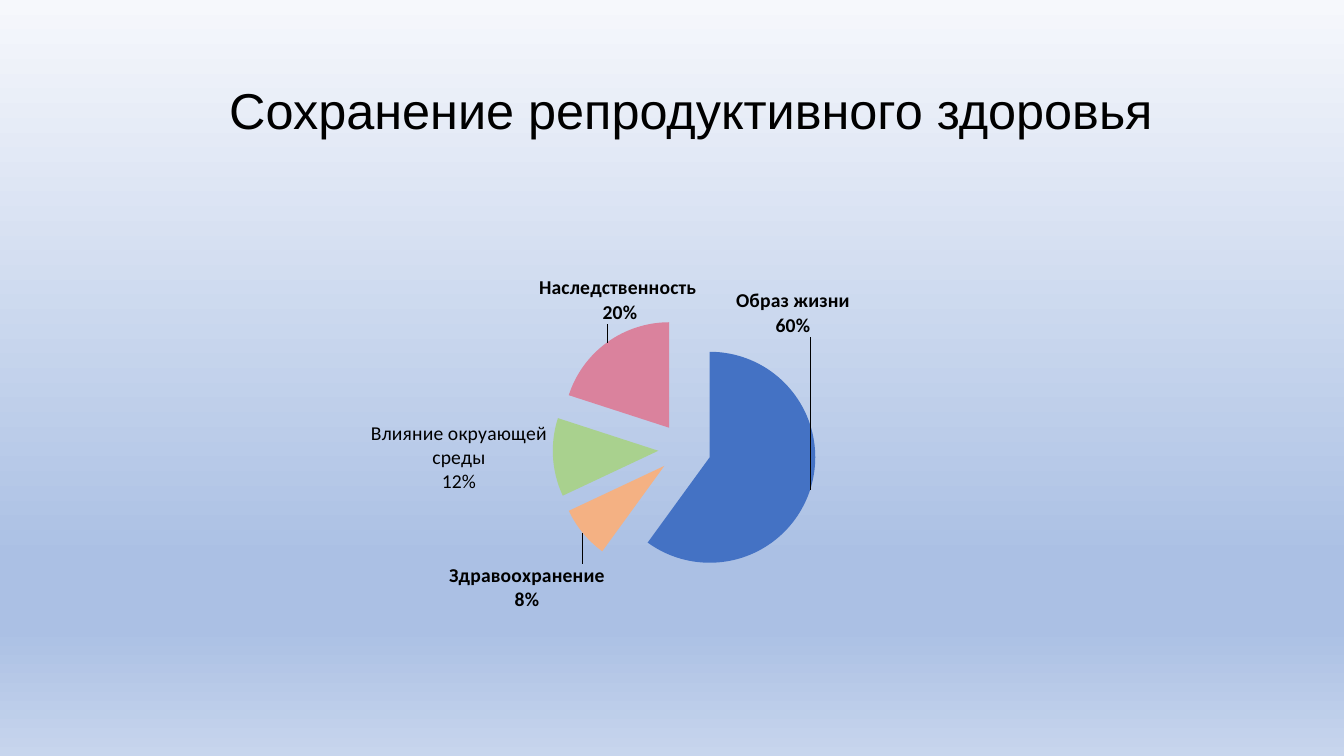
from copy import deepcopy

from lxml import etree
from pptx import Presentation
from pptx.chart.data import CategoryChartData
from pptx.dml.color import RGBColor
from pptx.enum.chart import XL_CHART_TYPE as ChartType, XL_LABEL_POSITION as LabelPos
from pptx.enum.text import MSO_ANCHOR, PP_ALIGN
from pptx.oxml.ns import qn
from pptx.util import Inches, Pt

BLACK = RGBColor(0x00, 0x00, 0x00)
BLUE = RGBColor(0x44, 0x72, 0xC4)
ORANGE = RGBColor(0xF4, 0xB1, 0x83)
GREEN = RGBColor(0xA9, 0xD1, 0x8E)
PINK = RGBColor(0xDA, 0x82, 0x9D)
SKY_TOP = RGBColor(0xF6, 0xF8, 0xFC)
SKY_DEEP = RGBColor(0xAB, 0xC0, 0xE4)
SKY_BASE = RGBColor(0xC7, 0xD5, 0xED)

BACKGROUND = [(0, SKY_TOP), (0.74, SKY_DEEP), (0.83, SKY_DEEP), (1, SKY_BASE)]

# Factor, share, slice colour, label shift as a fraction of the chart
FACTORS = [
    ("Образ жизни", 0.6, BLUE, (-0.09, -0.46)),
    ("Здравоохранение", 0.08, ORANGE, (0.03, 0.06)),
    ("Влияние окруающей среды", 0.12, GREEN, None),
    ("Наследственность ", 0.2, PINK, (0.11, -0.03)),
]
PLOT_AREA = {"x": 0.333, "y": 0.297, "w": 0.622, "h": 0.599}


def chart_element(tag, **attrs):
    el = etree.Element(qn(f"c:{tag}"))
    for name, value in attrs.items():
        el.set(name, str(value))
    return el


def manual_layout(settings):
    layout = chart_element("layout")
    manual = chart_element("manualLayout")
    layout.append(manual)
    for tag, value in settings.items():
        manual.append(chart_element(tag, val=value))
    return layout


def set_background(slide):
    fill = slide.background.fill
    fill.gradient()
    fill.gradient_angle = 270
    stops = slide.element.find(".//" + qn("a:gsLst"))
    while len(stops) < len(BACKGROUND):
        stops.append(deepcopy(stops[0]))
    for stop, (position, color) in zip(fill.gradient_stops, BACKGROUND):
        stop.position = position
        stop.color.rgb = color


def style_font(font, name, size, bold=False):
    font.name = name
    font.size = Pt(size)
    font.bold = bold
    font.color.rgb = BLACK


def add_title(slide, text):
    box = slide.shapes.add_textbox(Inches(0.92), Inches(0.4), Inches(11.87), Inches(1.45))
    tf = box.text_frame
    tf.word_wrap = True
    tf.vertical_anchor = MSO_ANCHOR.MIDDLE
    p = tf.paragraphs[0]
    p.text = text
    p.alignment = PP_ALIGN.CENTER
    p.line_spacing = 0.9
    style_font(p.runs[0].font, "Arial", 36)


def label_slice(point, shift, name, share):
    label = point.data_label
    if shift is None:
        # Plain label with its own text
        tf = label.text_frame
        tf.text = f"{name}\n{share:.0%}"
        for p in tf.paragraphs:
            style_font(p.runs[0].font, "Calibri", 14)
        label.position = LabelPos.OUTSIDE_END
        return
    style_font(label.font, "Calibri", 14, bold=True)
    label.position = LabelPos.OUTSIDE_END


def place_label(d_label, shift):
    d_label.find(qn("c:showCatName")).set("val", "1")
    if shift is None:
        return
    layout = manual_layout({"x": shift[0], "y": shift[1]})
    d_label.find(qn("c:idx")).addnext(layout)
    layout.addnext(chart_element("numFmt", formatCode="0%", sourceLinked=0))
    separator = chart_element("separator")
    separator.text = "\n"
    d_label.find(qn("c:showBubbleSize")).addnext(separator)


def add_factor_pie(slide):
    data = CategoryChartData(number_format="0%")
    data.categories = [factor[0] for factor in FACTORS]
    data.add_series("Series 1", [factor[1] for factor in FACTORS])
    chart = slide.shapes.add_chart(
        ChartType.PIE, Inches(1.13), Inches(1.85), Inches(8.79), Inches(4.37), data
    ).chart
    chart.has_legend = False
    chart.has_title = False
    style_font(chart.font, "Calibri", 10)
    plot = chart.plots[0]
    plot.vary_by_categories = True
    series = plot.series[0]

    # Labels shared by the series
    labels = series.data_labels
    labels.show_value = True
    labels.show_category_name = True
    labels.number_format = "0%"
    labels.number_format_is_linked = False
    labels.position = LabelPos.OUTSIDE_END
    style_font(labels.font, "Calibri", 14, bold=True)

    # Slices and their labels
    for i, (name, share, color, shift) in enumerate(FACTORS):
        point = series.points[i]
        point.format.fill.solid()
        point.format.fill.fore_color.rgb = color
        label_slice(point, shift, name, share)
    ser = chart.element.find(".//" + qn("c:ser"))
    for d_label, factor in zip(ser.iter(qn("c:dLbl")), FACTORS):
        place_label(d_label, factor[3])
    ser.find(qn("c:dPt")).addprevious(chart_element("explosion", val=25))

    # Plot area
    area = chart.element.find(".//" + qn("c:plotArea"))
    old_layout = area.find(qn("c:layout"))
    if old_layout is not None:
        area.remove(old_layout)
    modes = {"layoutTarget": "inner", "xMode": "edge", "yMode": "edge"}
    area.insert(0, manual_layout({**modes, **PLOT_AREA}))


def main():
    prs = Presentation()
    prs.slide_width = Inches(13.33)
    prs.slide_height = Inches(7.5)
    slide = prs.slides.add_slide(prs.slide_layouts[6])
    set_background(slide)
    add_title(slide, "Сохранение репродуктивного здоровья")
    add_factor_pie(slide)
    prs.save("out.pptx")


if __name__ == "__main__":
    main()
